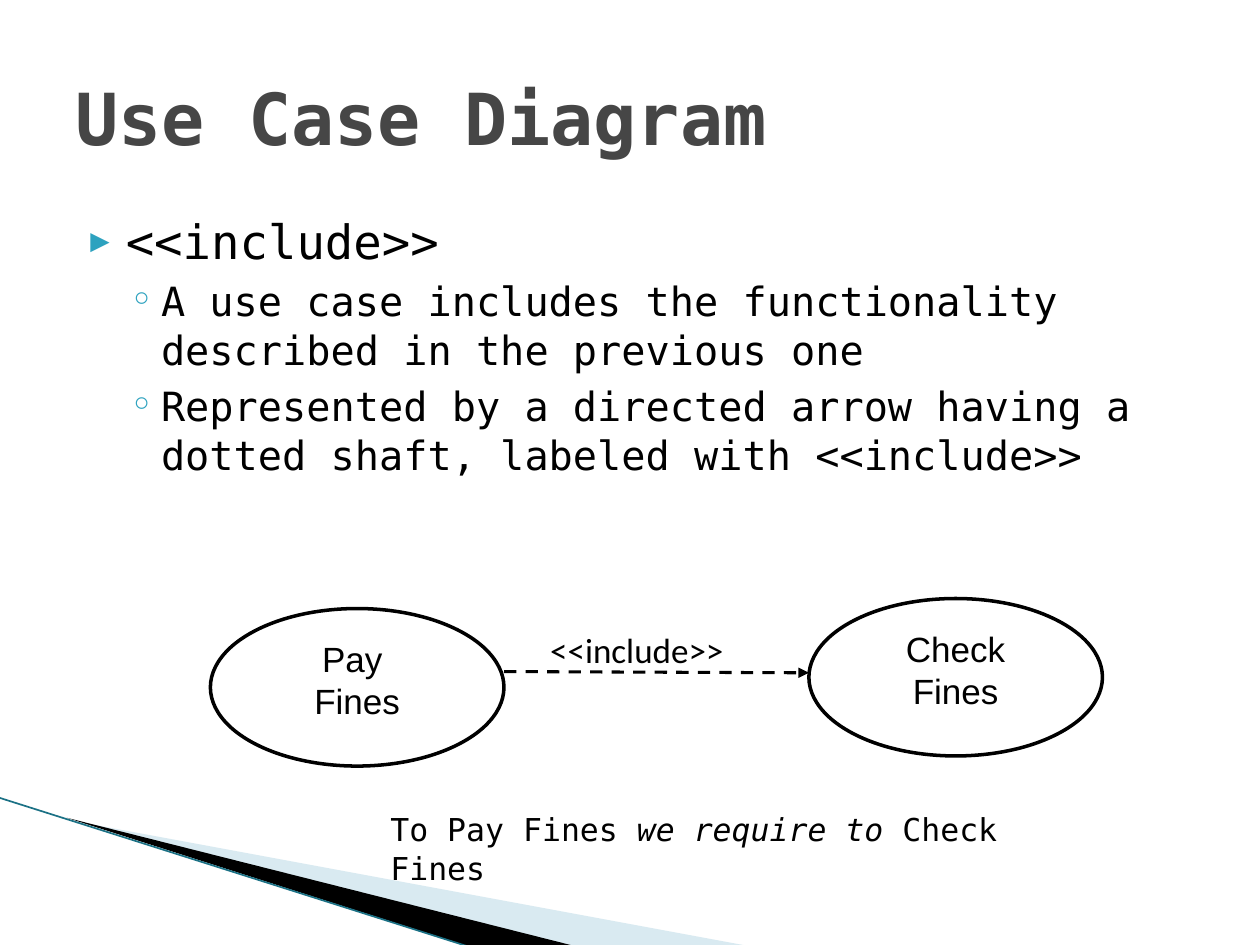
from dataclasses import dataclass

from lxml import etree
from pptx import Presentation
from pptx import util as u
from pptx.dml.color import RGBColor
from pptx.enum import dml, shapes, text
from pptx.oxml import ns

Inches, Pt = u.Inches, u.Pt


@dataclass(frozen=True)
class Theme:
    mono: str = "DejaVu Sans Mono"
    sans: str = "Arial"
    label: str = "Calibri"
    ink: str = "000000"
    paper: str = "FFFFFF"
    heading: str = "464646"
    accent: str = "2DA2BF"
    pale: str = "A0CBDC"
    edge: str = "1B7185"
    title_size: int = 41
    topic_size: int = 27
    detail_size: int = 23
    diagram_size: int = 20
    caption_size: int = 18
    mono_spacing: float = 1.03


THEME = Theme()


def colour(value):
    return RGBColor.from_string(value)


def place(item, box):
    item.left, item.top, item.width, item.height = map(Inches, box)


def add_child(parent, tag, **attributes):
    return etree.SubElement(parent, ns.qn(tag), attributes)


def write(para, wording, font=THEME.mono, size=18, ink=THEME.ink,
          bold=False, italic=False):
    span = para.add_run()
    span.text = wording
    span.font.name = font
    span.font.size = Pt(size)
    span.font.color.rgb = colour(ink)
    span.font.bold = bold
    span.font.italic = italic
    return span


def set_bullet(para, symbol, margin, indent, percent=100):
    props = para._p.get_or_add_pPr()
    props.set("marL", str(Inches(margin)))
    props.set("indent", str(Inches(indent)))
    add_child(add_child(props, "a:buClr"), "a:srgbClr", val=THEME.accent)
    add_child(props, "a:buSzPct", val=str(percent * 1000))
    add_child(props, "a:buFont", typeface=THEME.mono)
    add_child(props, "a:buChar", char=symbol)


def add_text_box(page, box):
    holder = page.shapes.add_textbox(*map(Inches, box))
    holder.text_frame.word_wrap = True
    return holder.text_frame


def add_line(page, start, end, ink, width):
    line = page.shapes.add_connector(
        shapes.MSO_CONNECTOR.STRAIGHT, *map(Inches, start + end))
    line.line.color.rgb = colour(ink)
    line.line.width = Pt(width)
    add_child(line._element.spPr, "a:effectLst")
    return line


def add_wedge(page, points, ink, opacity=100):
    corners = [(Inches(x), Inches(y)) for x, y in points]
    builder = page.shapes.build_freeform(*corners[0], scale=1.0)
    builder.add_line_segments(corners[1:], close=True)
    wedge = builder.convert_to_shape()
    wedge.shadow.inherit = False
    wedge.fill.solid()
    wedge.fill.fore_color.rgb = colour(ink)
    wedge.line.fill.background()
    if opacity < 100:
        tint = wedge._element.spPr.find(".//" + ns.qn("a:srgbClr"))
        add_child(tint, "a:alpha", val=str(opacity * 1000))


def add_swoosh(page, box):
    left, top, width, height = box
    bottom = top + height
    add_wedge(page, [(0.55, top + 0.18), (left + width, bottom), (4.56, bottom)],
              THEME.pale, opacity=40)
    add_wedge(page, [(0.53, top + 0.16), (4.57, bottom), (3.72, bottom)], THEME.ink)
    add_line(page, (left, top), (3.71, bottom), THEME.edge, 0.95)


def add_title(page, box, wording):
    title = page.shapes.title
    place(title, box)
    frame = title.text_frame
    frame.word_wrap = True
    frame.vertical_anchor = text.MSO_ANCHOR.MIDDLE
    para = frame.paragraphs[0]
    para.alignment = text.PP_ALIGN.LEFT
    write(para, wording, size=THEME.title_size, ink=THEME.heading, bold=True)


def add_points(page, box, topic, details):
    frame = add_text_box(page, box)
    para = frame.paragraphs[0]
    set_bullet(para, "▶", 0.4, -0.28, percent=68)
    para.line_spacing = THEME.mono_spacing
    write(para, topic, size=THEME.topic_size)
    for detail in details:
        para = frame.add_paragraph()
        para.level = 1
        set_bullet(para, "◦", 0.68, -0.25)
        para.space_before = Pt(3.2)
        para.line_spacing = THEME.mono_spacing
        write(para, detail, size=THEME.detail_size)


def add_node(page, box, preset, wording, font=THEME.sans,
             align=text.PP_ALIGN.CENTER, outlined=True):
    node = page.shapes.add_shape(preset, *map(Inches, box))
    node.shadow.inherit = False
    if outlined:
        node.fill.solid()
        node.fill.fore_color.rgb = colour(THEME.paper)
        node.line.color.rgb = colour(THEME.ink)
        node.line.width = Pt(2)
    else:
        node.fill.background()
        node.line.fill.background()
    frame = node.text_frame
    frame.word_wrap = True
    frame.vertical_anchor = text.MSO_ANCHOR.TOP
    para = frame.paragraphs[0]
    para.alignment = align
    para.space_after = Pt(10)
    for index, part in enumerate(wording.split("\n")):
        if index:
            para.add_line_break()
        write(para, part, font=font, size=THEME.diagram_size)


def add_diagram(page, box):
    left, top, width, height = box
    oval = shapes.MSO_SHAPE.OVAL
    node_width, node_height = 2.33, 1.25
    target = left + width - node_width
    add_node(page, (target, top, node_width, node_height), oval, "Check Fines")
    arrow = add_line(page, (left + node_width, top + 0.58),
                     (target, top + 0.59), THEME.ink, 1.75)
    arrow.line.dash_style = dml.MSO_LINE.DASH
    add_child(arrow.line._get_or_add_ln(), "a:tailEnd", type="triangle")
    add_node(page, (left + 2.58, top + 0.17, 1.92, 0.37),
             shapes.MSO_SHAPE.FLOWCHART_ALTERNATE_PROCESS, "<<include>>",
             font=THEME.label, align=text.PP_ALIGN.LEFT, outlined=False)
    add_node(page, (left, top + height - node_height, node_width, node_height),
             oval, "Pay \nFines")


def add_caption(page, box, parts):
    para = add_text_box(page, box).paragraphs[0]
    para.line_spacing = THEME.mono_spacing
    for wording, italic in parts:
        write(para, wording, size=THEME.caption_size, italic=italic)


def main():
    deck = Presentation()
    deck.slide_width, deck.slide_height = Inches(10), Inches(7.5)
    page = deck.slides.add_slide(deck.slide_layouts[5])
    page.background.fill.solid()
    page.background.fill.fore_color.rgb = colour(THEME.paper)
    add_swoosh(page, (-0.01, 6.33, 5.96, 1.18))
    add_points(page, (0.5, 1.62, 9, 4.95), "<<include>>", [
        "A use case includes the functionality described in the previous one",
        "Represented by a directed arrow having a dotted shaft, "
        "labeled with <<include>>",
    ])
    add_title(page, (0.5, 0.3, 9, 1.25), "Use Case Diagram")
    add_diagram(page, (1.67, 4.75, 7.08, 1.33))
    add_caption(page, (3, 6.37, 5.5, 0.4), [
        ("To Pay Fines ", False),
        ("we require to ", True),
        ("Check Fines", False),
    ])
    deck.save("out.pptx")


if __name__ == "__main__":
    main()
